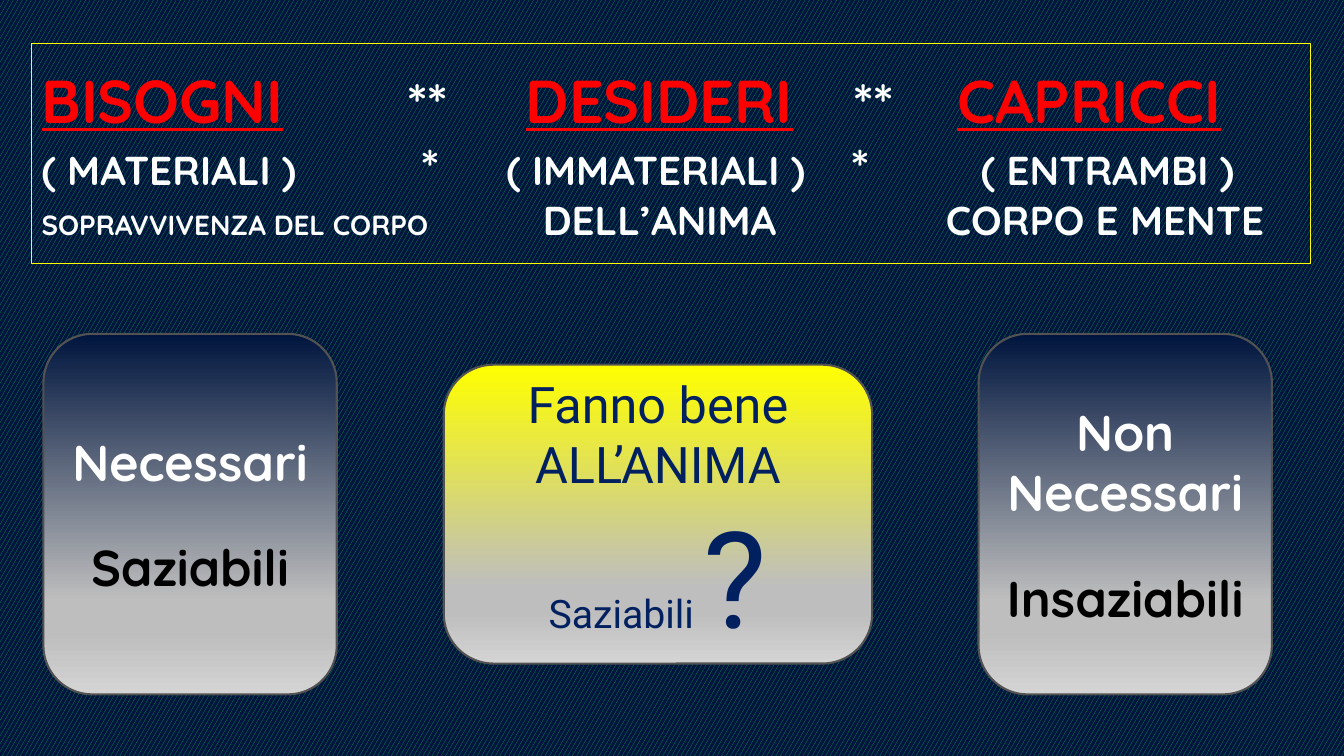
from dataclasses import dataclass

from lxml import etree
from pptx import Presentation
from pptx.dml.color import RGBColor
from pptx.enum.dml import MSO_PATTERN
from pptx.enum.shapes import MSO_SHAPE
from pptx.enum.text import MSO_ANCHOR, MSO_AUTO_SIZE, PP_ALIGN
from pptx.oxml.ns import qn
from pptx.util import Pt

ROUNDED = MSO_SHAPE.ROUNDED_RECTANGLE
CONFETTI = MSO_PATTERN.LARGE_CONFETTI
MIDDLE = MSO_ANCHOR.MIDDLE
NO_AUTOFIT = MSO_AUTO_SIZE.NONE
LEFT, CENTER = PP_ALIGN.LEFT, PP_ALIGN.CENTER
TITLE_ONLY = 5


@dataclass(frozen=True)
class Theme:
    navy: str = "00153E"
    green: str = "00B050"
    red: str = "FF0000"
    white: str = "FFFFFF"
    black: str = "000000"
    yellow: str = "FFFF00"
    blue: str = "002060"
    outline: str = "525252"
    grey_stops: tuple = ((74, "BEBEBE"), (83, "BEBEBE"), (100, "D4D4D4"))
    heading_font: str = "Quicksand"
    body_font: str = "Roboto"
    heading: float = 43.2
    double_star: float = 39.6
    star: float = 36
    subheading: float = 28.8
    caption: float = 19.8
    card: float = 36
    small: float = 28
    question: float = 96


THEME = Theme()


@dataclass(frozen=True)
class Span:
    text: str
    size: float
    color: str
    font: str = THEME.heading_font
    bold: bool = True
    underline: bool = False


@dataclass(frozen=True)
class Line:
    spans: tuple
    space_before: float = 0
    tabs: tuple = ()


@dataclass(frozen=True)
class Card:
    left: float
    top: float
    width: float
    height: float
    top_color: str
    lines: tuple


def heading(text: str) -> Span:
    return Span(text, THEME.heading, THEME.red, underline=True)


def white(text: str, size: float) -> Span:
    return Span(text, size, THEME.white)


def soul(text: str, size: float) -> Span:
    return Span(text, size, THEME.blue, THEME.body_font, bold=False)


def need_lines(need: str, appetite: str) -> tuple:
    return (
        Line((white(need, THEME.card),)),
        Line((Span(appetite, THEME.card, THEME.black),), space_before=32),
    )


TAB = white("\t", THEME.subheading)

TITLE_LINES = (
    Line((heading("BISOGNI"), TAB, white("**", THEME.double_star), TAB,
          heading("DESIDERI"), TAB, white("**", THEME.double_star), TAB,
          heading("CAPRICCI")), tabs=(261, 346, 580, 654)),
    Line((white("( MATERIALI )\t", THEME.subheading), white("*", THEME.star),
          white("\t( IMMATERIALI )\t", THEME.subheading),
          white("*", THEME.star),
          white("\t( ENTRAMBI )", THEME.subheading)),
         tabs=(271, 332, 578, 671)),
    Line((white("SOPRAVVIVENZA DEL CORPO", THEME.caption),
          white("\tDELL’ANIMA\tCORPO E MENTE", THEME.subheading)),
         tabs=(358, 646)),
)

CARDS = (
    Card(31, 238.5, 209.5, 257.5, THEME.navy,
         need_lines("Necessari", "Saziabili")),
    Card(699, 238.5, 209.5, 257.5, THEME.navy,
         need_lines("Non Necessari", "Insaziabili")),
    Card(317, 260.5, 306, 213.5, THEME.yellow, (
        Line((soul("Fanno bene", THEME.card),)),
        Line((soul("ALL’ANIMA", THEME.card),)),
        Line((soul("Saziabili ", THEME.small),
              soul("?", THEME.question))),
    )),
)


def write_lines(shape, lines: tuple, alignment) -> None:
    frame = shape.text_frame
    for name, value in {"word_wrap": True, "auto_size": NO_AUTOFIT,
                        "vertical_anchor": MIDDLE}.items():
        setattr(frame, name, value)
    for index, line in enumerate(lines):
        para = frame.add_paragraph() if index else frame.paragraphs[0]
        para.alignment = alignment
        if line.space_before:
            para.space_before = Pt(line.space_before)
        if line.tabs:
            # Tab stops line up the three columns
            stops = etree.SubElement(para._p.get_or_add_pPr(), qn("a:tabLst"))
            for stop in line.tabs:
                etree.SubElement(stops, qn("a:tab"),
                                 pos=str(Pt(stop)), algn="l")
        for span in line.spans:
            run = para.add_run()
            run.text = span.text
            formats = {"name": span.font, "size": Pt(span.size),
                       "bold": span.bold, "underline": span.underline}
            for name, value in formats.items():
                setattr(run.font, name, value)
            run.font.color.rgb = RGBColor.from_string(span.color)


def place(shape, left: float, top: float, width: float, height: float) -> None:
    for name, value in {"left": left, "top": top,
                        "width": width, "height": height}.items():
        setattr(shape, name, Pt(value))


def set_outline(shape, color: str, width: float) -> None:
    shape.line.color.rgb = RGBColor.from_string(color)
    shape.line.width = Pt(width)


def fill_downwards(shape, stops: tuple) -> None:
    shape.fill.gradient()
    shape.fill.gradient_angle = 270
    stop_list = shape._element.spPr.find(qn("a:gradFill")).find(qn("a:gsLst"))
    for old_stop in list(stop_list):
        stop_list.remove(old_stop)
    for percent, color in stops:
        stop = etree.SubElement(stop_list, qn("a:gs"), pos=str(percent * 1000))
        etree.SubElement(stop, qn("a:srgbClr"), val=color)


def draw_card(page, card: Card) -> None:
    box = page.shapes.add_shape(ROUNDED, Pt(card.left), Pt(card.top),
                                Pt(card.width), Pt(card.height))
    box.shadow.inherit = False
    fill_downwards(box, ((0, card.top_color), *THEME.grey_stops))
    set_outline(box, THEME.outline, 1.5)
    write_lines(box, card.lines, CENTER)


def main() -> None:
    deck = Presentation()
    deck.slide_width, deck.slide_height = Pt(960), Pt(540)
    page = deck.slides.add_slide(deck.slide_layouts[TITLE_ONLY])

    # Patterned background
    backdrop = page.background.fill
    backdrop.patterned()
    backdrop.pattern = CONFETTI
    backdrop.fore_color.rgb = RGBColor.from_string(THEME.green)
    backdrop.back_color.rgb = RGBColor.from_string(THEME.navy)

    # Title with three columns
    title = page.shapes.title
    place(title, 22.5, 31, 913.5, 157)
    set_outline(title, THEME.yellow, 0.75)
    write_lines(title, TITLE_LINES, LEFT)

    # Cards below the columns
    for card in CARDS:
        draw_card(page, card)

    deck.save("out.pptx")


if __name__ == "__main__":
    main()
